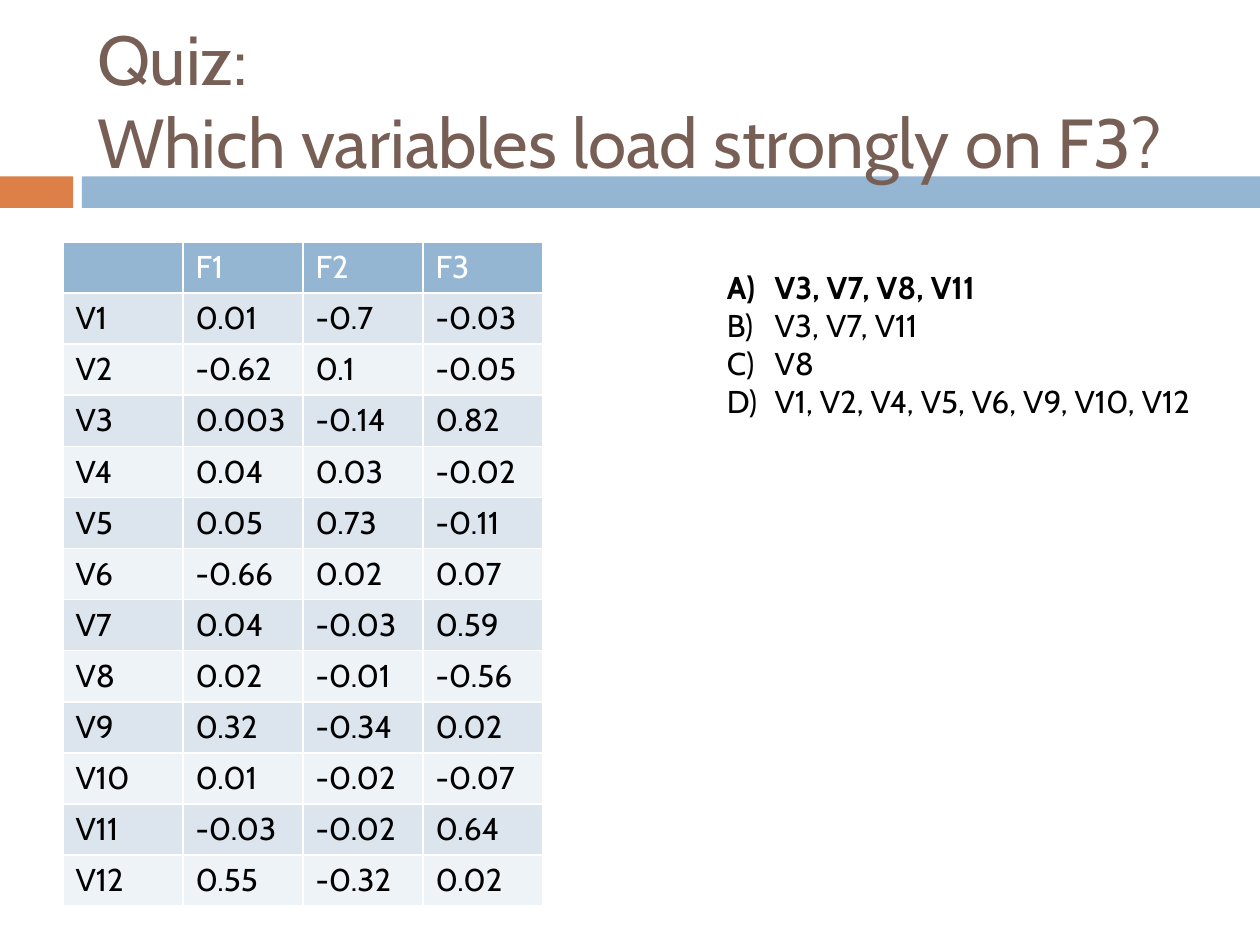
from lxml import etree
from pptx import Presentation
from pptx import util as u
from pptx.dml.color import RGBColor
from pptx.enum import shapes, text
from pptx.oxml.ns import qn

WIDE, HIGH = 10, 7.5
FONT = "Cabin"
BROWN = RGBColor(0x77, 0x5F, 0x55)
ORANGE = RGBColor(0xDD, 0x80, 0x47)
BLUE = RGBColor(0x94, 0xB6, 0xD2)
BANDS = RGBColor(0xDC, 0xE5, 0xEE), RGBColor(0xEE, 0xF3, 0xF7)
WHITE = RGBColor(0xFF, 0xFF, 0xFF)
BLACK = RGBColor(0, 0, 0)

TITLE = "Quiz: \vWhich variables load strongly on F3?"
FACTORS = ["", "F1", "F2", "F3"]
LOADS = [
    ("0.01", "-0.7", "-0.03"),
    ("-0.62", "0.1", "-0.05"),
    ("0.003", "-0.14", "0.82"),
    ("0.04", "0.03", "-0.02"),
    ("0.05", "0.73", "-0.11"),
    ("-0.66", "0.02", "0.07"),
    ("0.04", "-0.03", "0.59"),
    ("0.02", "-0.01", "-0.56"),
    ("0.32", "-0.34", "0.02"),
    ("0.01", "-0.02", "-0.07"),
    ("-0.03", "-0.02", "0.64"),
    ("0.55", "-0.32", "0.02"),
]
CHOICES = [
    "V3, V7, V8, V11",
    "V3, V7, V11",
    "V8",
    "V1, V2, V4, V5, V6, V9, V10, V12",
]
RIGHT = 0  # index of the correct choice
BARS = [(0, 0.58, ORANGE), (0.65, WIDE - 0.65, BLUE)]


def box(*sides):
    return [u.Inches(side) for side in sides]


def style(para, size, color, bold=False):
    font = para.font
    font.name, font.size, font.bold = FONT, u.Pt(size), bold
    font.color.rgb = color


def add_title(slide):
    title = slide.shapes.title
    title.left, title.top, title.width, title.height = box(0.67, 0.25, 8.92, 1.08)
    frame = title.text_frame
    frame.text = TITLE
    frame.auto_size = text.MSO_AUTO_SIZE.NONE
    frame.vertical_anchor = text.MSO_ANCHOR.MIDDLE
    para = frame.paragraphs[0]
    para.alignment = text.PP_ALIGN.LEFT
    style(para, 39.6, BROWN)


def add_bars(slide):
    """Place the two bars behind the title, whose descenders overlap them."""
    for left, width, color in BARS:
        bar = slide.shapes.add_shape(
            shapes.MSO_SHAPE.RECTANGLE, *box(left, 1.4, width, 0.25))
        bar.shadow.inherit = False
        bar.fill.solid()
        bar.fill.fore_color.rgb = color
        bar.line.fill.background()
        slide.shapes.title.element.addprevious(bar.element)


def add_loads(slide):
    rows = [FACTORS] + [(f"V{n}", *vals) for n, vals in enumerate(LOADS, 1)]
    grid = slide.shapes.add_table(
        len(rows), len(FACTORS), *box(0.5, 1.92, 3.81, 5.27)).table
    for r, row in enumerate(rows):
        for c, word in enumerate(row):
            cell = grid.cell(r, c)
            cell.text = word
            cell.fill.solid()
            cell.fill.fore_color.rgb = BANDS[(r - 1) % 2] if r else BLUE
            style(cell.text_frame.paragraphs[0], 18, BLACK if r else WHITE)


def add_choices(slide):
    frame = slide.shapes.add_textbox(*box(5.67, 2.08, 4, 1.62)).text_frame
    frame.word_wrap = True
    frame.text = "\n".join(CHOICES)
    for n, para in enumerate(frame.paragraphs):
        style(para, 18, BLACK, n == RIGHT)
        props = para._p.get_or_add_pPr()
        props.set("marL", str(u.Inches(0.38)))
        props.set("indent", str(-u.Inches(0.38)))
        mark = etree.Element(qn("a:buAutoNum"), type="alphaUcParenR")
        props.find(qn("a:defRPr")).addprevious(mark)


def main():
    deck = Presentation()
    deck.slide_width, deck.slide_height = box(WIDE, HIGH)
    slide = deck.slides.add_slide(deck.slide_layouts.get_by_name("Title Only"))
    add_title(slide)
    add_bars(slide)
    add_loads(slide)
    add_choices(slide)
    deck.save("out.pptx")


if __name__ == "__main__":
    main()
